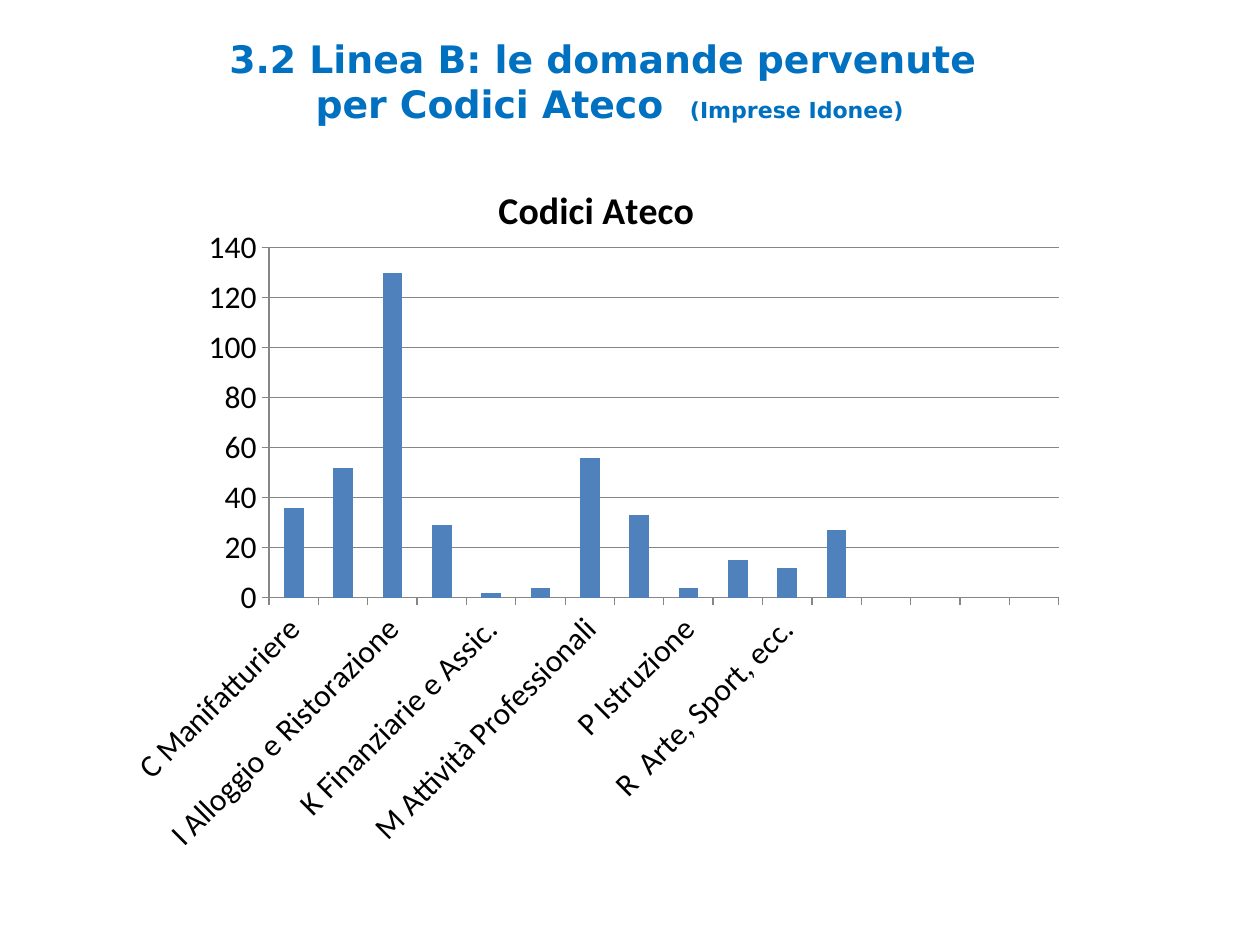
"""Build the slide with the column chart of applications by Ateco code."""
import pptx
import pptx.chart.data
import pptx.dml.color
import pptx.enum.chart
import pptx.enum.text
import pptx.oxml
import pptx.oxml.ns
import pptx.util

BLUE = pptx.dml.color.RGBColor(0x00, 0x70, 0xC0)
STEEL = pptx.dml.color.RGBColor(0x4F, 0x81, 0xBD)
GREY = pptx.dml.color.RGBColor(0x86, 0x86, 0x86)
BLACK = pptx.dml.color.RGBColor(0, 0, 0)
SCALE = 914400 / 126


def px(*sizes):
    return [pptx.util.Emu(round(size * SCALE)) for size in sizes]


deck = pptx.Presentation()
deck.slide_width, deck.slide_height = px(1260, 945)
slide = deck.slides.add_slide(deck.slide_layouts[6])

frame = slide.shapes.add_textbox(*px(74, 26, 1071, 110)).text_frame
frame.word_wrap = True
frame.vertical_anchor = pptx.enum.text.MSO_ANCHOR.MIDDLE
para = frame.paragraphs[0]
para.alignment = pptx.enum.text.PP_ALIGN.CENTER
parts = [
    ("3.2 Linea B: le domande pervenute ", 21.6, True),
    ("per Codici Ateco  ", 21.6, False),
    ("(Imprese Idonee)", 12.6, False),
]
for text, size, ends in parts:
    run = para.add_run()
    run.text = text
    run.font.name = "DejaVu Sans"
    run.font.size = pptx.util.Pt(size)
    run.font.bold = True
    run.font.color.rgb = BLUE
    if ends:
        para.add_line_break()

counts = [
    ("C Manifatturiere", 36),
    ("G Commercio", 52),
    ("I Alloggio e Ristorazione", 130),
    ("J Inform. e Comun.", 29),
    ("K Finanziarie e Assic.", 2),
    ("L Attività Immobiliari ", 4),
    ("M Attività Professionali", 56),
    ("N Noleggio e Agenzie di Viaggio", 33),
    ("P Istruzione", 4),
    ("Q Sanità e Ass. Sociale", 15),
    ("R  Arte, Sport, ecc.", 12),
    ("S Altre Att. di Servizio", 27),
] + [("", None)] * 4
data = pptx.chart.data.CategoryChartData()
data.categories = [name for name, count in counts]
data.add_series("Series 1", [count for name, count in counts])
kind = pptx.enum.chart.XL_CHART_TYPE.COLUMN_CLUSTERED
chart = slide.shapes.add_chart(kind, *px(115, 155, 963, 714), data).chart
chart.has_legend = False
chart.font.name = "Calibri"
chart.font.size = pptx.util.Pt(18)
chart.font.color.rgb = BLACK

chart.has_title = True
head = chart.chart_title.text_frame.paragraphs[0].add_run()
head.text = "Codici Ateco"
head.font.name = "Calibri"
head.font.size = pptx.util.Pt(21.6)
head.font.bold = True
head.font.color.rgb = BLACK
chart.chart_title.include_in_layout = False

plot = chart.plots[0]
plot.gap_width = 150
plot.vary_by_categories = False
fill = plot.series[0].format.fill
fill.solid()
fill.fore_color.rgb = STEEL

scale = chart.value_axis
scale.minimum_scale, scale.maximum_scale, scale.major_unit = 0, 140, 20
scale.has_major_gridlines = True
names = chart.category_axis
for line in (scale.format.line, names.format.line, scale.major_gridlines.format.line):
    line.color.rgb = GREY
    line.width = pptx.util.Pt(0.75)
for axis in (scale, names):
    axis.major_tick_mark = pptx.enum.chart.XL_TICK_MARK.OUTSIDE
    axis.tick_labels.font.size = pptx.util.Pt(18)
body = names._element.find(".//" + pptx.oxml.ns.qn("a:bodyPr"))
body.set("rot", "-2700000")
body.set("vert", "horz")

area = chart._chartSpace.chart.plotArea
for old in area.findall(pptx.oxml.ns.qn("c:layout")):
    area.remove(old)
rules = [
    ("layoutTarget", "inner"), ("xMode", "edge"), ("yMode", "edge"),
    ("x", 0.16), ("y", 0.13), ("w", 0.82), ("h", 0.49),
]
inner = "".join(f'<c:{tag} val="{val}"/>' for tag, val in rules)
area.insert(0, pptx.oxml.parse_xml(
    f'<c:layout {pptx.oxml.ns.nsdecls("c")}><c:manualLayout>{inner}</c:manualLayout></c:layout>'
))

deck.save("out.pptx")
